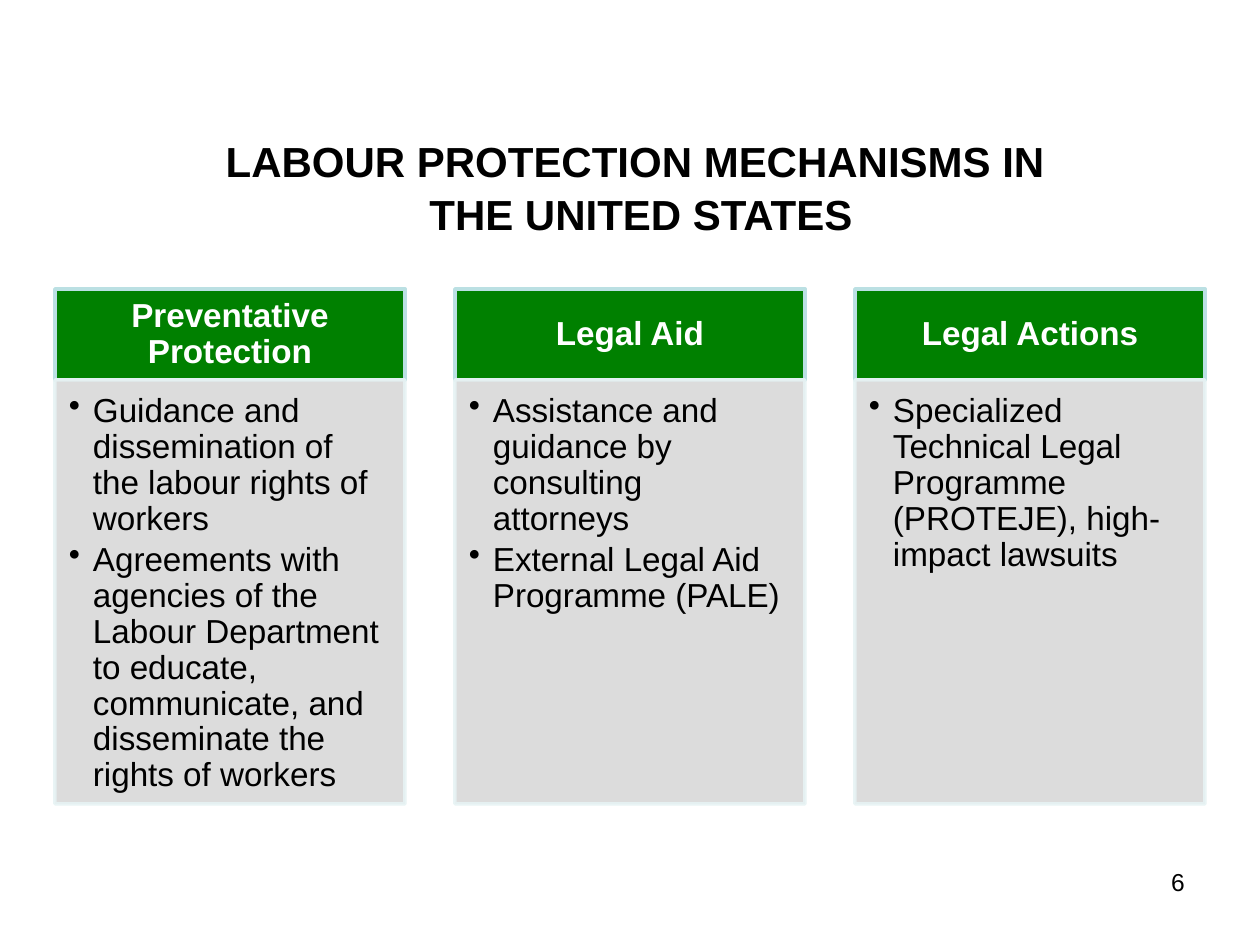
"""Build a slide comparing three labour protection mechanisms in columns."""
from lxml import etree
from pptx import Presentation
from pptx import util as u
from pptx.dml.color import RGBColor
from pptx.enum import shapes, text
from pptx.oxml.ns import qn

SCALE = 914400 / 126
THEME = {
    "font": "Arial",
    "ink": "000000",
    "header_text": "FFFFFF",
    "header_fill": "008000",
    "header_line": "BBE0E3",
    "body_fill": "D9D9D9",
    "body_line": "E7F3F4",
    "title_size": 24,
    "text_size": 19,
    "number_size": 14,
}
COLUMNS = [
    ("Preventative Protection", [
        "Guidance and dissemination of the labour rights of workers",
        "Agreements with agencies of the Labour Department to educate, "
        "communicate, and disseminate the rights of workers",
    ]),
    ("Legal Aid", [
        "Assistance and guidance by consulting attorneys",
        "External Legal Aid Programme (PALE)",
    ]),
    ("Legal Actions", [
        "Specialized Technical Legal Programme (PROTEJE), high- impact lawsuits",
    ]),
]
LEFT, STEP, WIDTH = 55, 400, 350
HEADER_TOP, HEADER_HEIGHT, BODY_HEIGHT = 289, 91, 424


def px(value):
    return u.Emu(round(value * SCALE))


def add_run(paragraph, content, size, color, bold=False):
    run = paragraph.add_run()
    run.text = content
    run.font.name = THEME["font"]
    run.font.size = u.Pt(THEME[size])
    run.font.bold = bold
    run.font.color.rgb = RGBColor.from_string(THEME[color])


presentation = Presentation()
presentation.slide_width, presentation.slide_height = px(1260), px(945)
slide = presentation.slides.add_slide(presentation.slide_layouts[6])

title = slide.shapes.add_textbox(px(74), px(107), px(1134), px(158)).text_frame
title.word_wrap = True
title.vertical_anchor = text.MSO_ANCHOR.MIDDLE
paragraph = title.paragraphs[0]
paragraph.alignment = text.PP_ALIGN.CENTER
paragraph.line_spacing = 1.05
add_run(paragraph, "LABOUR PROTECTION MECHANISMS IN ", "title_size", "ink", True)
paragraph.add_line_break()
add_run(paragraph, "THE UNITED STATES", "title_size", "ink", True)

for index, (heading, points) in enumerate(COLUMNS):
    left = LEFT + index * STEP
    parts = [
        ("header", HEADER_TOP, HEADER_HEIGHT, [heading], (19, 10, 19, 10)),
        ("body", HEADER_TOP + HEADER_HEIGHT, BODY_HEIGHT, points, (14, 14, 19, 21)),
    ]
    for part, top, height, entries, insets in parts:
        is_header = part == "header"
        shape = slide.shapes.add_shape(
            shapes.MSO_SHAPE.RECTANGLE, px(left), px(top), px(WIDTH), px(height))
        shape.shadow.inherit = False
        shape.fill.solid()
        shape.fill.fore_color.rgb = RGBColor.from_string(THEME[part + "_fill"])
        shape.line.color.rgb = RGBColor.from_string(THEME[part + "_line"])
        shape.line.width = u.Pt(2)
        if not is_header:
            for color in shape._element.spPr.iter(qn("a:srgbClr")):
                etree.SubElement(color, qn("a:alpha"), val="90000")

        frame = shape.text_frame
        frame.word_wrap = True
        frame.vertical_anchor = (
            text.MSO_ANCHOR.MIDDLE if is_header else text.MSO_ANCHOR.TOP)
        (frame.margin_left, frame.margin_top,
         frame.margin_right, frame.margin_bottom) = map(px, insets)
        for position, entry in enumerate(entries):
            paragraph = frame.add_paragraph() if position else frame.paragraphs[0]
            paragraph.line_spacing = 0.9
            if is_header:
                paragraph.alignment = text.PP_ALIGN.CENTER
                add_run(paragraph, entry, "text_size", "header_text", True)
            else:
                paragraph.alignment = text.PP_ALIGN.LEFT
                paragraph.space_after = u.Pt(2.85)
                properties = paragraph._p.get_or_add_pPr()
                properties.set("marL", str(px(24)))
                properties.set("indent", str(px(-24)))
                etree.SubElement(properties, qn("a:buChar"), char="•")
                add_run(paragraph, entry, "text_size", "ink")

number = slide.shapes.add_textbox(px(903), px(861), px(294), px(66)).text_frame
number.word_wrap = True
paragraph = number.paragraphs[0]
paragraph.alignment = text.PP_ALIGN.RIGHT
add_run(paragraph, "6", "number_size", "ink")

presentation.save("out.pptx")
